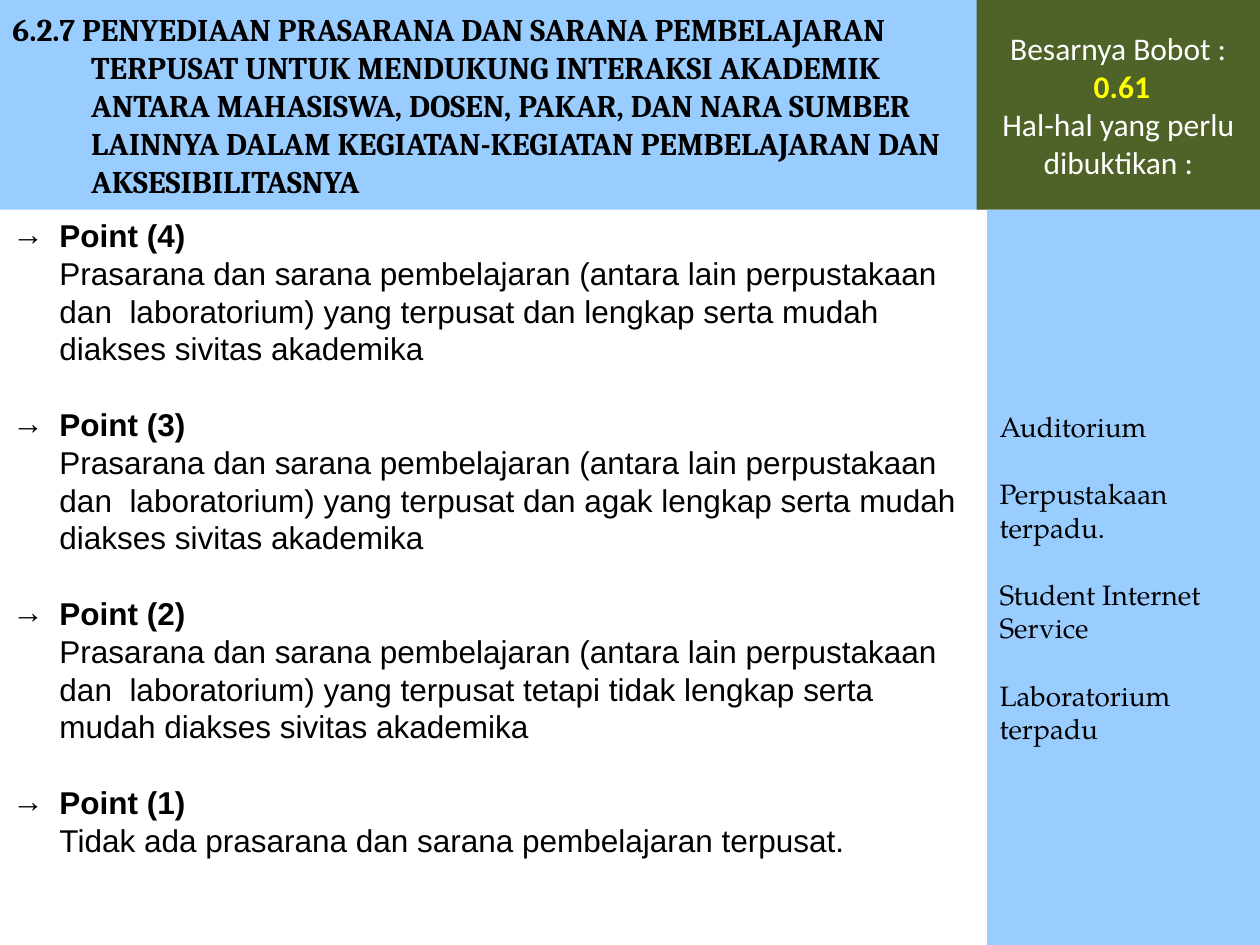
from dataclasses import dataclass

from lxml import etree
from pptx import Presentation
from pptx.dml.color import RGBColor
from pptx.enum.shapes import MSO_SHAPE
from pptx.enum.text import MSO_ANCHOR, PP_ALIGN
from pptx.oxml.ns import qn
from pptx.util import Cm, Pt

RECTANGLE = MSO_SHAPE.RECTANGLE
TOP, MIDDLE = MSO_ANCHOR.TOP, MSO_ANCHOR.MIDDLE
LEFT, CENTER = PP_ALIGN.LEFT, PP_ALIGN.CENTER


@dataclass(frozen=True)
class Theme:
    blue: str = "99CCFF"
    green: str = "4F6228"
    black: str = "000000"
    white: str = "FFFFFF"
    yellow: str = "FFFF00"
    size: float = 18
    small: float = 16
    leading: float = 1.2


@dataclass(frozen=True)
class Area:
    left: float
    top: float
    width: float
    height: float

    def lengths(self):
        return Cm(self.left), Cm(self.top), Cm(self.width), Cm(self.height)


@dataclass(frozen=True)
class Style:
    font: str
    size: float
    color: str
    bold: bool = False


@dataclass(frozen=True)
class Point:
    score: int
    detail: str


THEME = Theme()
SLIDE_WIDTH, SLIDE_HEIGHT = 25.4, 19.05
HEADER_HEIGHT = 4.23
MAIN_WIDTH = 19.9
WEIGHT_LEFT = 19.69
POINT_INDENT, TITLE_INDENT = 0.95, 1.59

TITLE = (
    "6.2.7 PENYEDIAAN PRASARANA DAN SARANA PEMBELAJARAN TERPUSAT UNTUK "
    "MENDUKUNG INTERAKSI AKADEMIK ANTARA MAHASISWA, DOSEN, PAKAR, DAN NARA "
    "SUMBER LAINNYA DALAM KEGIATAN-KEGIATAN PEMBELAJARAN DAN AKSESIBILITASNYA"
)
FACILITIES = "Prasarana dan sarana pembelajaran (antara lain perpustakaan dan  laboratorium) yang terpusat"
POINTS = [
    Point(4, f"{FACILITIES} dan lengkap serta mudah diakses sivitas akademika"),
    Point(3, f"{FACILITIES} dan agak lengkap serta mudah diakses sivitas akademika"),
    Point(2, f"{FACILITIES} tetapi tidak lengkap serta mudah diakses sivitas akademika"),
    Point(1, "Tidak ada prasarana dan sarana pembelajaran terpusat."),
]
EVIDENCE = ["Auditorium", "Perpustakaan terpadu.", "Student Internet Service", "Laboratorium terpadu"]


def add_panel(slide, area: Area, fill: str):
    box = slide.shapes.add_shape(RECTANGLE, *area.lengths())
    box.shadow.inherit = False
    box.fill.solid()
    box.fill.fore_color.rgb = RGBColor.from_string(fill)
    box.line.fill.background()
    return prepare_frame(box, MIDDLE)


def prepare_frame(box, anchor):
    frame = box.text_frame
    frame.word_wrap = True
    frame.vertical_anchor = anchor
    return frame


def add_para(frame, text: str, style: Style, first: bool = False, gap: bool = False,
             align=LEFT, margin: float = 0, indent: float = 0):
    """Add one paragraph; a gap leaves the height of one line above it."""
    para = frame.paragraphs[0] if first else frame.add_paragraph()
    para.alignment = align
    para.line_spacing = Pt(style.size * THEME.leading)
    para.space_before = Pt(style.size * THEME.leading if gap else 0)
    properties = para._p.get_or_add_pPr()
    properties.set("marL", str(Cm(margin)))
    properties.set("indent", str(Cm(indent)))
    span = para.add_run()
    span.text = text
    span.font.name = style.font
    span.font.size = Pt(style.size)
    span.font.bold = style.bold
    span.font.color.rgb = RGBColor.from_string(style.color)
    return para


def add_arrow_bullet(para) -> None:
    properties = para._p.get_or_add_pPr()
    etree.SubElement(properties, qn("a:buFont")).set("typeface", "Arial")
    etree.SubElement(properties, qn("a:buChar")).set("char", "→")


def add_points(slide, area: Area) -> None:
    frame = prepare_frame(slide.shapes.add_textbox(*area.lengths()), TOP)
    heading = Style("Arial", THEME.size, THEME.black, bold=True)
    body = Style("Arial", THEME.size, THEME.black)
    for index, point in enumerate(POINTS):
        para = add_para(frame, f"Point ({point.score})", heading, first=index == 0,
                        gap=index > 0, margin=POINT_INDENT, indent=-POINT_INDENT)
        add_arrow_bullet(para)
        add_para(frame, point.detail, body, margin=POINT_INDENT)


def main() -> None:
    deck = Presentation()
    deck.slide_width, deck.slide_height = Cm(SLIDE_WIDTH), Cm(SLIDE_HEIGHT)
    page = deck.slides.add_slide(deck.slide_layouts[6])
    lower_height = SLIDE_HEIGHT - HEADER_HEIGHT

    # Scoring points
    add_points(page, Area(0, HEADER_HEIGHT, MAIN_WIDTH, lower_height))

    # Title band
    title = add_panel(page, Area(0, 0, MAIN_WIDTH, HEADER_HEIGHT), THEME.blue)
    add_para(title, TITLE, Style("Cambria", THEME.size, THEME.black, bold=True),
             first=True, margin=TITLE_INDENT, indent=-TITLE_INDENT)

    # Evidence column
    evidence = add_panel(
        page, Area(MAIN_WIDTH, HEADER_HEIGHT, SLIDE_WIDTH - MAIN_WIDTH, lower_height), THEME.blue)
    evidence_style = Style("TeX Gyre Pagella", THEME.small, THEME.black)
    for index, item in enumerate(EVIDENCE):
        add_para(evidence, item, evidence_style, first=index == 0, gap=index > 0)

    # Weight box
    weight = add_panel(
        page, Area(WEIGHT_LEFT, 0, SLIDE_WIDTH - WEIGHT_LEFT, HEADER_HEIGHT), THEME.green)
    label = Style("Calibri", THEME.size, THEME.white)
    value = Style("Calibri", THEME.size, THEME.yellow, bold=True)
    add_para(weight, "Besarnya Bobot :", label, first=True, align=CENTER)
    add_para(weight, " 0.61", value, align=CENTER)
    add_para(weight, "Hal-hal yang perlu dibuktikan :", label, align=CENTER)

    deck.save("out.pptx")


if __name__ == "__main__":
    main()
